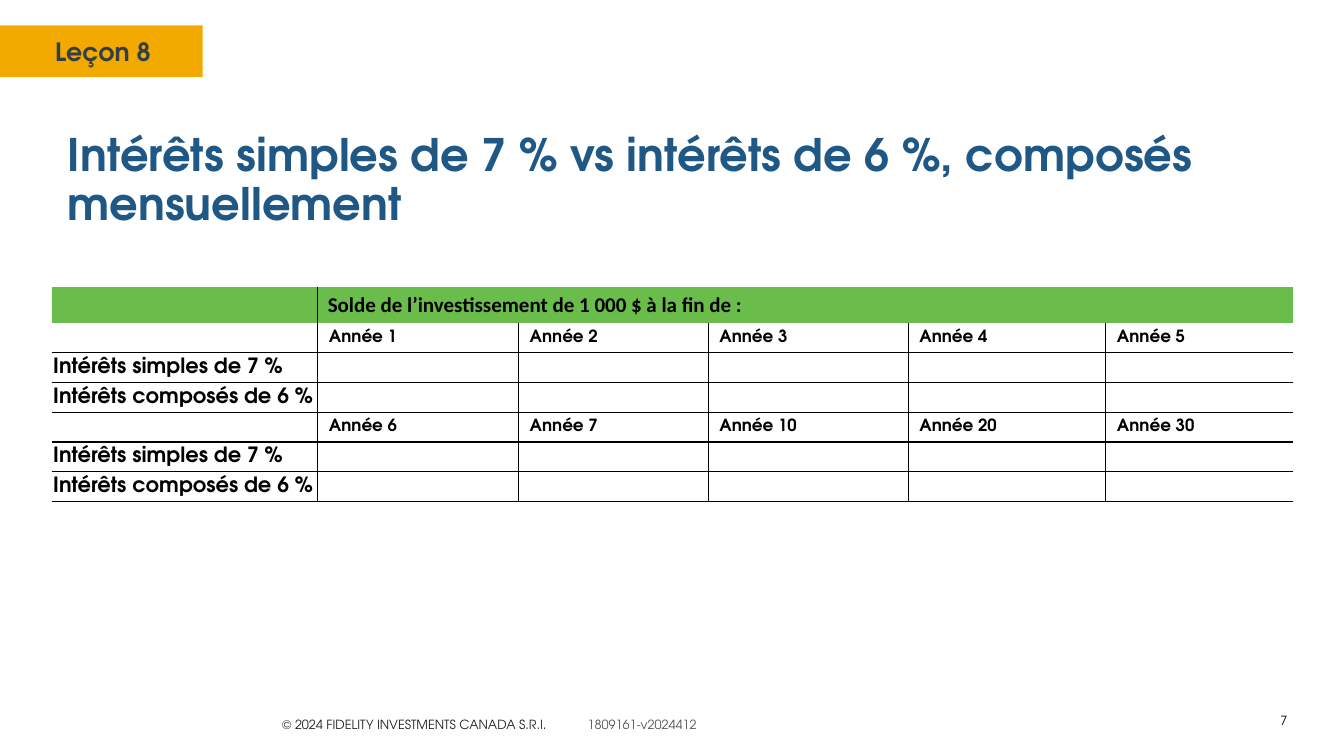
from dataclasses import dataclass

from lxml.etree import SubElement
from pptx import Presentation
from pptx.dml.color import RGBColor
from pptx.enum.shapes import MSO_SHAPE
from pptx.enum.text import MSO_ANCHOR, MSO_AUTO_SIZE, PP_ALIGN
from pptx.oxml.ns import qn
from pptx.util import Cm, Pt


@dataclass(frozen=True)
class Theme:
    font: str = "TeX Gyre Adventor"
    header_font: str = "Calibri"
    band: str = "F2A900"
    lesson: str = "333F48"
    title: str = "205885"
    header: str = "6ABD4A"
    ink: str = "000000"
    legal: str = "222222"
    code: str = "545454"
    title_size: int = 32
    lesson_size: int = 18
    label_size: int = 15
    year_size: int = 12
    small_size: int = 9


THEME = Theme()
NO_STYLE = "{2D5ABB26-0587-4C30-8999-92F81FD0307C}"
COLUMN_WIDTHS = (6.7, 5.06, 4.78, 5.04, 4.98, 4.72)
HEADER_HEIGHT = 0.91
ROW_HEIGHT = 0.75
CELL_MARGIN = 0.03
TEXT_INDENT = 0.25
YEAR_GROUPS = ((1, 2, 3, 4, 5), (6, 7, 10, 20, 30))
RATE_LABELS = ("Intérêts simples de 7\u00a0%", "Intérêts composés de 6\u00a0%")


def set_font(font, size, color, bold=False, name=THEME.font):
    font.name = name
    font.size = Pt(size)
    font.bold = bold
    font.color.rgb = RGBColor.from_string(color)


def add_band(s, left, top, width, height):
    sp = s.shapes.add_shape(MSO_SHAPE.RECTANGLE, Cm(left), Cm(top), Cm(width), Cm(height))
    sp.shadow.inherit = False
    sp.fill.solid()
    sp.fill.fore_color.rgb = RGBColor.from_string(THEME.band)
    sp.line.fill.background()


def add_text(s, text, left, top, width, height, size, color, bold=False):
    tf = s.shapes.add_textbox(Cm(left), Cm(top), Cm(width), Cm(height)).text_frame
    tf.word_wrap = True
    p = tf.paragraphs[0]
    p.text = text
    set_font(p.font, size, color, bold)
    return p


def add_footer(s, legal, code):
    p = add_text(s, "", 6.86, 17.93, 11.6, 0.64, THEME.small_size, THEME.legal)
    tabs = SubElement(p._p.get_or_add_pPr(), qn("a:tabLst"))
    SubElement(tabs, qn("a:tab"), pos=str(Cm(7.7)), algn="l")
    p._p.pPr.insert(0, tabs)
    for text, color in ((legal, THEME.legal), ("\t" + code, THEME.code)):
        r = p.add_run()
        r.text = text
        set_font(r.font, THEME.small_size, color)


def set_title(s, text):
    sp = s.shapes.title
    sp.left, sp.top, sp.width, sp.height = Cm(1.45), Cm(3.23), Cm(31), Cm(1.85)
    tf = sp.text_frame
    tf.auto_size = MSO_AUTO_SIZE.NONE
    tf.vertical_anchor = MSO_ANCHOR.TOP
    p = tf.paragraphs[0]
    p.text = text
    p.alignment = PP_ALIGN.LEFT
    p.line_spacing = 0.9
    set_font(p.font, THEME.title_size, THEME.title, True)


def set_borders(cell, sides):
    tcPr = cell._tc.get_or_add_tcPr()
    for side in sides:
        ln = SubElement(tcPr, qn("a:ln" + side), w=str(Pt(1)))
        fill = SubElement(ln, qn("a:solidFill"))
        SubElement(fill, qn("a:srgbClr"), val=THEME.ink)


def fill_cell(cell, text, size, indent=0, name=THEME.font):
    cell.margin_top = cell.margin_bottom = cell.margin_right = Cm(CELL_MARGIN)
    cell.margin_left = Cm(CELL_MARGIN + indent)
    cell.vertical_anchor = MSO_ANCHOR.MIDDLE
    p = cell.text_frame.paragraphs[0]
    p.text = text
    set_font(p.font, size, THEME.ink, True, name)
    if not text:
        SubElement(p._p, qn("a:endParaRPr"), sz=str(size * 100))


def borders_for(row, col, last_col):
    sides = ""
    if col > 0 and (row > 0 or col == 1):
        sides += "L"
    if col < last_col and (row > 0 or col == 0):
        sides += "R"
    if row > 1:
        sides += "T"
    if row > 0:
        sides += "B"
    return sides


def add_balance_table(s, heading):
    rows = [("", heading, "", "", "", "")]
    for years in YEAR_GROUPS:
        rows.append(("", *(f"Année {year}" for year in years)))
        rows.extend((label, "", "", "", "", "") for label in RATE_LABELS)

    height = HEADER_HEIGHT + ROW_HEIGHT * (len(rows) - 1)
    frame = s.shapes.add_table(len(rows), len(COLUMN_WIDTHS), Cm(1.31), Cm(7.23),
                               Cm(sum(COLUMN_WIDTHS)), Cm(height))
    table = frame.table
    table.first_row = table.horz_banding = False
    table._tbl.tblPr.find(qn("a:tableStyleId")).text = NO_STYLE
    for column, width in zip(table.columns, COLUMN_WIDTHS):
        column.width = Cm(width)

    last_col = len(COLUMN_WIDTHS) - 1
    for i, texts in enumerate(rows):
        table.rows[i].height = Cm(ROW_HEIGHT if i else HEADER_HEIGHT)
        for j, text in enumerate(texts):
            cell = table.cell(i, j)
            set_borders(cell, borders_for(i, j, last_col))
            if i == 0:
                fill_cell(cell, text, THEME.label_size, TEXT_INDENT - CELL_MARGIN, THEME.header_font)
                cell.fill.solid()
                cell.fill.fore_color.rgb = RGBColor.from_string(THEME.header)
            else:
                size = THEME.label_size if j == 0 and text else THEME.year_size
                fill_cell(cell, text, size, TEXT_INDENT if j else 0)
                cell.fill.background()
    table.cell(0, 1).merge(table.cell(0, last_col))


def main():
    prs = Presentation()
    prs.slide_width, prs.slide_height = Cm(33.87), Cm(19.05)
    s = prs.slides.add_slide(prs.slide_layouts[5])
    add_band(s, 0, 0.64, 5.11, 1.3)
    add_text(s, "Leçon 8", 1.14, 0.79, 3.33, 1.02, THEME.lesson_size, THEME.lesson, True)
    add_footer(s, "© 2024 FIDELITY INVESTMENTS CANADA S.R.I.", "1809161-v2024412")
    set_title(s, "Intérêts simples de 7\u00a0% vs intérêts de 6\u00a0%, composés mensuellement")
    number = add_text(s, "7", 30.91, 17.85, 1.78, 0.64, THEME.small_size, THEME.ink)
    number.alignment = PP_ALIGN.RIGHT
    add_balance_table(s, "Solde de l’investissement de 1\u00a0000\u00a0$ à la fin de\u00a0:")
    prs.save("out.pptx")


if __name__ == "__main__":
    main()
